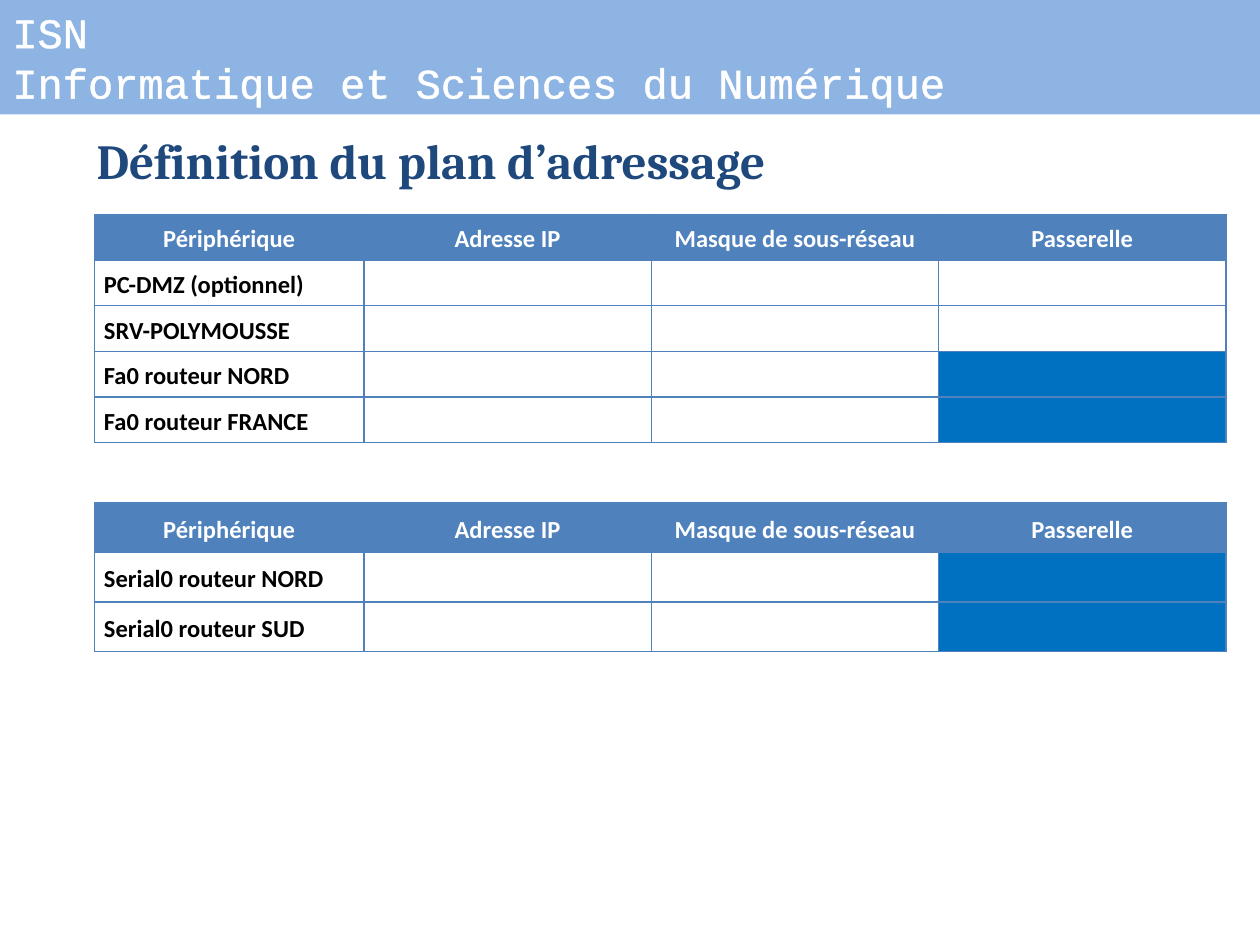
from lxml import etree
from pptx import Presentation
from pptx.dml.color import RGBColor
from pptx.enum.shapes import MSO_SHAPE
from pptx.enum.text import MSO_ANCHOR, PP_ALIGN
from pptx.oxml.ns import qn
from pptx.util import Pt

RECTANGLE = MSO_SHAPE.RECTANGLE
TOP, MIDDLE = MSO_ANCHOR.TOP, MSO_ANCHOR.MIDDLE
LEFT, CENTER = PP_ALIGN.LEFT, PP_ALIGN.CENTER

WHITE = RGBColor(0xFF, 0xFF, 0xFF)
BLACK = RGBColor(0x00, 0x00, 0x00)
NAVY = RGBColor(0x1F, 0x49, 0x7D)
SKY = RGBColor(0x8E, 0xB4, 0xE3)
STEEL = RGBColor(0x4F, 0x81, 0xBD)
BLOCKED = RGBColor(0x00, 0x70, 0xC0)

HEADINGS = ["Périphérique", "Adresse IP", "Masque de sous-réseau", "Passerelle"]
COLUMN_WIDTHS = [154, 164.2, 164.2, 164.2]
LAN_DEVICES = [
    ("PC-DMZ (optionnel)", True),
    ("SRV-POLYMOUSSE", True),
    ("Fa0 routeur NORD", False),
    ("Fa0 routeur FRANCE", False),
]
SERIAL_DEVICES = [("Serial0 routeur NORD", False), ("Serial0 routeur SUD", False)]


def add_line(parent, tag, color, width):
    line = etree.SubElement(parent, qn(tag), w=str(Pt(width)))
    fill = etree.SubElement(line, qn("a:solidFill"))
    etree.SubElement(fill, qn("a:srgbClr"), val=str(color))


def write_text(frame, text, *, font, size, color, bold=False, align=LEFT,
               spacing=None, outline=None):
    for index, line in enumerate(text.split("\n")):
        paragraph = frame.paragraphs[0] if index == 0 else frame.add_paragraph()
        paragraph.alignment = align
        if spacing:
            paragraph.line_spacing = spacing
        run = paragraph.add_run()
        run.text = line
        if outline:
            add_line(run._r.get_or_add_rPr(), "a:ln", color, outline)
        run.font.name = font
        run.font.size = Pt(size)
        run.font.bold = bold
        run.font.color.rgb = color


def add_banner(slide, left, top, width, height):
    banner = slide.shapes.add_shape(RECTANGLE, Pt(left), Pt(top), Pt(width), Pt(height))
    banner.shadow.inherit = False
    banner.fill.solid()
    banner.fill.fore_color.rgb = SKY
    banner.line.fill.background()
    frame = banner.text_frame
    frame.word_wrap = True
    frame.vertical_anchor = TOP
    write_text(frame, "ISN\nInformatique et Sciences du Numérique",
               font="Courier New", size=24, color=WHITE, outline=1.45)


def add_title(slide, left, top, width, height):
    title = slide.shapes.add_textbox(Pt(left), Pt(top), Pt(width), Pt(height))
    title.text_frame.word_wrap = True
    write_text(title.text_frame, "Définition du plan d’adressage",
               font="Cambria", size=28, color=NAVY, bold=True)


def format_cell(cell, text, fill, color, align):
    cell.margin_left = cell.margin_right = Pt(5.4)
    cell.margin_top = cell.margin_bottom = 0
    cell.vertical_anchor = MIDDLE
    properties = cell._tc.get_or_add_tcPr()
    for tag in ("a:lnL", "a:lnR", "a:lnT", "a:lnB"):
        add_line(properties, tag, STEEL, 1)
    if fill is None:
        cell.fill.background()
    else:
        cell.fill.solid()
        cell.fill.fore_color.rgb = fill
    if text:
        write_text(cell.text_frame, text, font="Calibri", size=14, color=color,
                   bold=True, align=align, spacing=1.15)


def add_address_table(slide, devices, left, top, width, height):
    row_count = len(devices) + 1
    table = slide.shapes.add_table(row_count, len(HEADINGS), Pt(left), Pt(top),
                                   Pt(width), Pt(height)).table
    table.first_row = False
    table.horz_banding = False
    for column, column_width in zip(table.columns, COLUMN_WIDTHS):
        column.width = Pt(column_width)
    for row in table.rows:
        row.height = Pt(height / row_count)
    for column, heading in enumerate(HEADINGS):
        format_cell(table.cell(0, column), heading, STEEL, WHITE, CENTER)
    for row, (device, has_gateway) in enumerate(devices, start=1):
        gateway_fill = None if has_gateway else BLOCKED
        for column, fill in enumerate([None, None, None, gateway_fill]):
            text = device if column == 0 else ""
            format_cell(table.cell(row, column), text, fill, BLACK, LEFT)


def main():
    presentation = Presentation()
    presentation.slide_width = Pt(720)
    presentation.slide_height = Pt(540)
    slide = presentation.slides.add_slide(presentation.slide_layouts[6])
    add_title(slide, 48.2, 71.3, 657.4, 74.9)
    table_width = sum(COLUMN_WIDTHS)
    add_address_table(slide, LAN_DEVICES, 54, 122.6, table_width, 130.3)
    add_address_table(slide, SERIAL_DEVICES, 54, 287.3, table_width, 85)
    add_banner(slide, 0, 0, 720, 65.4)
    presentation.save("out.pptx")


if __name__ == "__main__":
    main()
